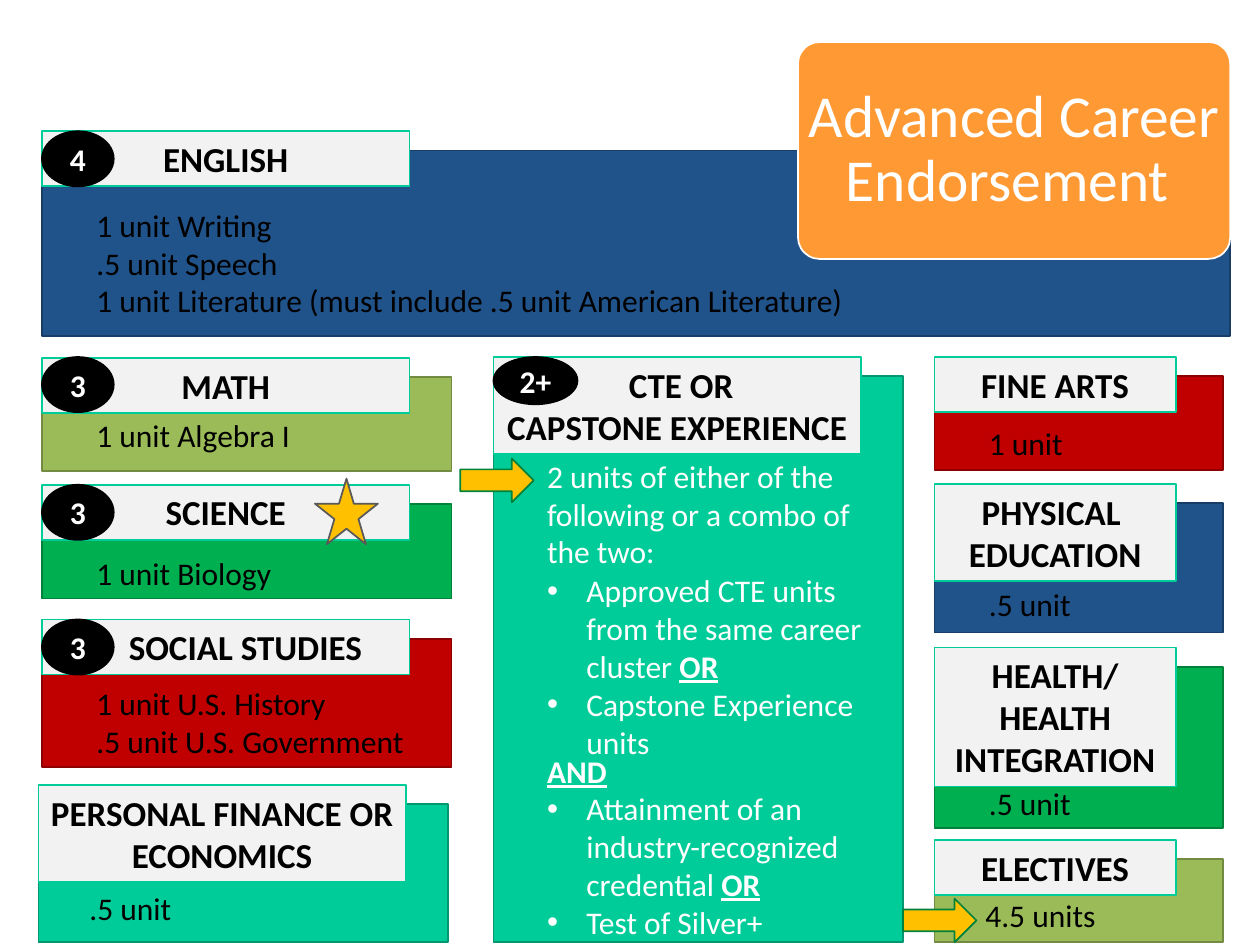
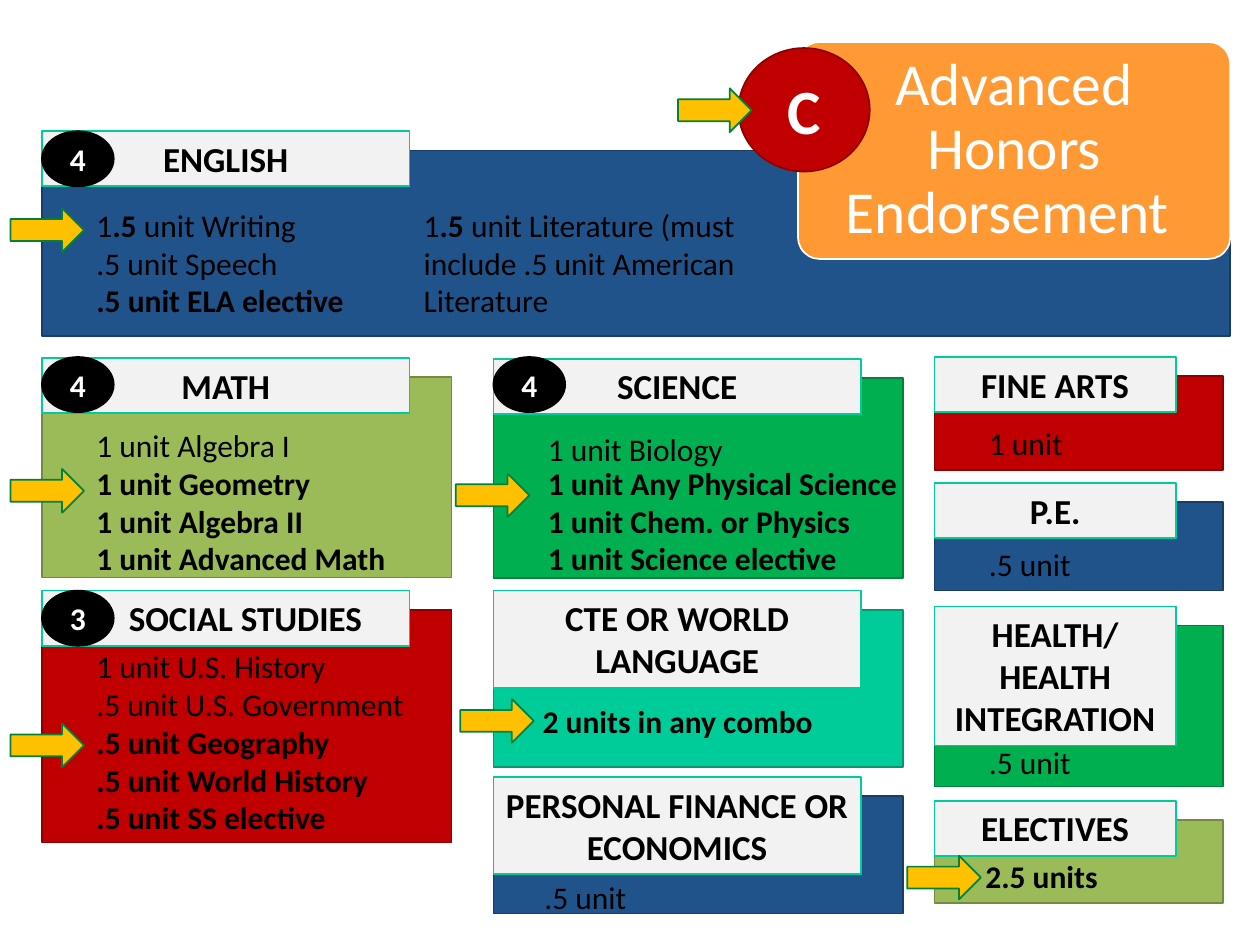
from lxml.etree import SubElement
from pptx import Presentation
from pptx.dml.color import RGBColor
from pptx.enum.shapes import MSO_SHAPE as Kind
from pptx.enum.text import MSO_ANCHOR, MSO_AUTO_SIZE, PP_ALIGN
from pptx.oxml.ns import qn
from pptx.util import Pt

FONT = "Calibri"
HUES = {
    "blue": "21538B", "navy": "183D67", "olive": "9BBB59", "moss": "738A42",
    "green": "00B050", "forest": "00823B", "red": "C00000", "wine": "8E0000",
    "mint": "00CC99", "teal": "009771", "orange": "FF9933", "gold": "FFC000",
    "pale": "F2F2F2", "gray": "595959", "black": "000000", "white": "FFFFFF",
}
EDGES = {"blue": "navy", "olive": "moss", "green": "forest", "red": "wine",
         "mint": "teal", "gold": "forest", "pale": "mint", "black": "black",
         "orange": "white"}
# Column: left edge, box width, label width
LEFT, MID, RIGHT = (24, 234, 210), (282, 234, 210), (534, 165, 138)
BANNER = (24, 679, 210)


def hue(name):
    return RGBColor.from_string(HUES[name])


def shape(slide, kind, x, y, w, h, tint, edge=None):
    item = slide.shapes.add_shape(kind, Pt(x), Pt(y), Pt(w), Pt(h))
    item.shadow.inherit = False
    item.fill.solid()
    item.fill.fore_color.rgb = hue(tint)
    item.line.color.rgb = hue(edge or EDGES[tint])
    item.line.width = Pt(1)
    return item


def bullet(para):
    props = para._p.get_or_add_pPr()
    props.set("marL", str(Pt(22.5)))
    props.set("indent", str(Pt(-22.5)))
    SubElement(props, qn("a:buFont")).set("typeface", "Arial")
    SubElement(props, qn("a:buChar")).set("char", "•")


def write(frame, lines, size, color, bold=False, align=PP_ALIGN.LEFT, under=False):
    """Fill a frame; *stars* mark bold words and a leading • marks a bullet."""
    frame.word_wrap = True
    for i, line in enumerate(lines):
        para = frame.add_paragraph() if i else frame.paragraphs[0]
        if line.startswith("•"):
            bullet(para)
            line = line[1:]
        para.alignment = align
        font = para.font
        font.name, font.size, font.bold = FONT, Pt(size), bold
        font.color.rgb = hue(color)
        for j, part in enumerate(line.split("*")):
            if part:
                run = para.add_run()
                run.text = part
                if j % 2:
                    run.font.bold = True
                    run.font.underline = under


def note(slide, x, y, w, lines, color="black"):
    box = slide.shapes.add_textbox(Pt(x), Pt(y), Pt(w), Pt(7 + 22 * len(lines)))
    write(box.text_frame, lines, 18, color, under=color == "white")
    box.text_frame.auto_size = MSO_AUTO_SIZE.SHAPE_TO_FIT_TEXT


def badge(slide, x, y, text, w=41, h=31.5, tint="black", size=18):
    oval = shape(slide, Kind.OVAL, x, y, w, h, tint)
    oval.text_frame.vertical_anchor = MSO_ANCHOR.MIDDLE
    write(oval.text_frame, [text], size, "white", True, PP_ALIGN.CENTER)


def arrow(slide, x, y):
    shape(slide, Kind.RIGHT_ARROW, x, y, 42, 25, "gold")


def card(slide, col, y, end, tint, title, lines=(), at=0, rows=1, dx=24, shift=0):
    """Draw a subject box down to end, its label of rows lines, and its units at a height."""
    x, wide, tab = col
    shape(slide, Kind.RECTANGLE, x, y + 11, wide, end - y - 11, tint)
    label = shape(slide, Kind.RECTANGLE, x, y, tab, 7.5 + 24 * rows, "pale")
    frame = label.text_frame
    frame.vertical_anchor = MSO_ANCHOR.TOP
    frame.margin_left = Pt(7.2 + shift)
    write(frame, title.split("\n"), 20, "black", True, PP_ALIGN.CENTER)
    if lines:
        note(slide, x + dx, at, min(wide - 26, 549), lines)


def english(slide, lines):
    card(slide, BANNER, 75, 192, "blue", "ENGLISH", lines, 114)
    badge(slide, 24, 75, "4")


def heading(slide, text):
    plate = shape(slide, Kind.ROUNDED_RECTANGLE, 456, 24, 247, 124, "orange")
    plate.adjustments[0] = 0.1
    box = slide.shapes.add_textbox(Pt(459.5), Pt(27.5), Pt(240), Pt(116.5))
    frame = box.text_frame
    frame.vertical_anchor = MSO_ANCHOR.MIDDLE
    frame.margin_left = frame.margin_right = Pt(1.7)
    frame.margin_top = frame.margin_bottom = Pt(1.7)
    write(frame, [text], 34, "white", align=PP_ALIGN.CENTER)
    frame.paragraphs[0].line_spacing = 0.9


def social(slide, y, end, at):
    card(slide, LEFT, y, end, "red", "SOCIAL STUDIES",
         ["1 unit U.S. History", ".5 unit U.S. Government"], at, shift=22.5)
    badge(slide, 24, y, "3")


def arts(slide):
    card(slide, RIGHT, 204, 268.5, "red", "FINE ARTS", ["1 unit"], 239)


def health(slide, y):
    card(slide, RIGHT, y, y + 103, "green", "HEALTH/\nHEALTH INTEGRATION",
         [".5 unit"], y + 74.5, rows=3)


def free(slide, y, units):
    card(slide, RIGHT, y, y + 58.5, "olive", "ELECTIVES", [units], y + 28.5, dx=22)


def career(slide):
    english(slide, ["1 unit Writing", ".5 unit Speech",
                    "1 unit Literature (must include .5 unit American Literature)"])
    heading(slide, "Advanced Career Endorsement ")
    card(slide, LEFT, 204.5, 269, "olive", "MATH", ["1 unit Algebra I"], 234)
    card(slide, LEFT, 277, 342, "green", "SCIENCE", ["1 unit Biology"], 313)
    for y in (204, 277):
        badge(slide, 24, y, "3")
    social(slide, 354, 438.5, 387.5)
    card(slide, (22, 234, 210), 448.5, 538.5, "mint", "PERSONAL FINANCE OR ECONOMICS",
         [".5 unit"], 504.5, rows=2, dx=22)
    arts(slide)
    card(slide, RIGHT, 276.5, 361.5, "blue", "PHYSICAL \nEDUCATION", [".5 unit"], 331, rows=2)
    health(slide, 370)
    card(slide, MID, 204, 538.5, "mint", " CTE OR\nCAPSTONE EXPERIENCE", rows=2)
    badge(slide, 282, 204, "2+", 48, 27)
    for y, lines in (
        (257.5, ["2 units of either of the following or a combo of the two:"]),
        (323, ["•Approved CTE units from the same career cluster *OR*",
               "•Capstone Experience units"]),
        (426, ["*AND*", "•Attainment of an industry-recognized credential *OR*",
               "•Test of Silver+"]),
    ):
        note(slide, 305.5, y, 204, lines, "white")
    free(slide, 480, "4.5 units")
    arrow(slide, 263, 262)
    arrow(slide, 516, 513.5)
    shape(slide, Kind.STAR_5_POINT, 180, 273.5, 36, 37.5, "gold", "gray")


def honors(slide):
    english(slide, ["1*.5* unit Writing", ".5 unit Speech", "*.5 unit ELA elective*"])
    note(slide, 235, 114, 215,
         ["1*.5* unit Literature (must include .5 unit American Literature"])
    heading(slide, "Advanced Honors Endorsement ")
    badge(slide, 422, 27.5, "C", 75, 70.5, "red", 36)
    card(slide, LEFT, 204.5, 330, "olive", "MATH", ["1 unit Algebra I"], 240)
    note(slide, 48, 261.5, 204,
         ["*1 unit Geometry*", "*1 unit Algebra II*", "*1 unit Advanced Math*"])
    card(slide, MID, 205, 330.5, "green", "SCIENCE", ["1 unit Biology"], 242)
    note(slide, 306, 261.5, 222, ["*1 unit Any Physical Science*",
                                  "*1 unit Chem. or Physics*", "*1 unit Science elective*"])
    for x in (24, 282):
        badge(slide, x, 204, "4")
    social(slide, 337.5, 481.5, 366)
    note(slide, 48, 409.5, 209,
         ["*.5 unit Geography*", "*.5 unit World History*", "*.5 unit SS elective*"])
    arts(slide)
    card(slide, RIGHT, 276, 337.5, "blue", "P.E.", [".5 unit"], 308)
    health(slide, 346.5)
    card(slide, MID, 444, 522, "blue", "PERSONAL FINANCE OR ECONOMICS",
         [".5 unit"], 498, rows=2, dx=22)
    card(slide, MID, 337.5, 438.5, "mint", "CTE OR WORLD LANGUAGE",
         ["*2 units in any combo*"], 397.5, rows=2, dx=21)
    free(slide, 457.5, "*2.5 units*")
    for spot in ((6, 119), (6, 268), (6, 413.5), (260.5, 270.5), (263, 399.5),
                 (518.5, 489), (387.5, 50.5)):
        arrow(slide, *spot)


def main():
    deck = Presentation()
    deck.slide_width, deck.slide_height = Pt(720), Pt(540)
    for build in (career, honors):
        build(deck.slides.add_slide(deck.slide_layouts[6]))
    deck.save("out.pptx")


if __name__ == "__main__":
    main()
